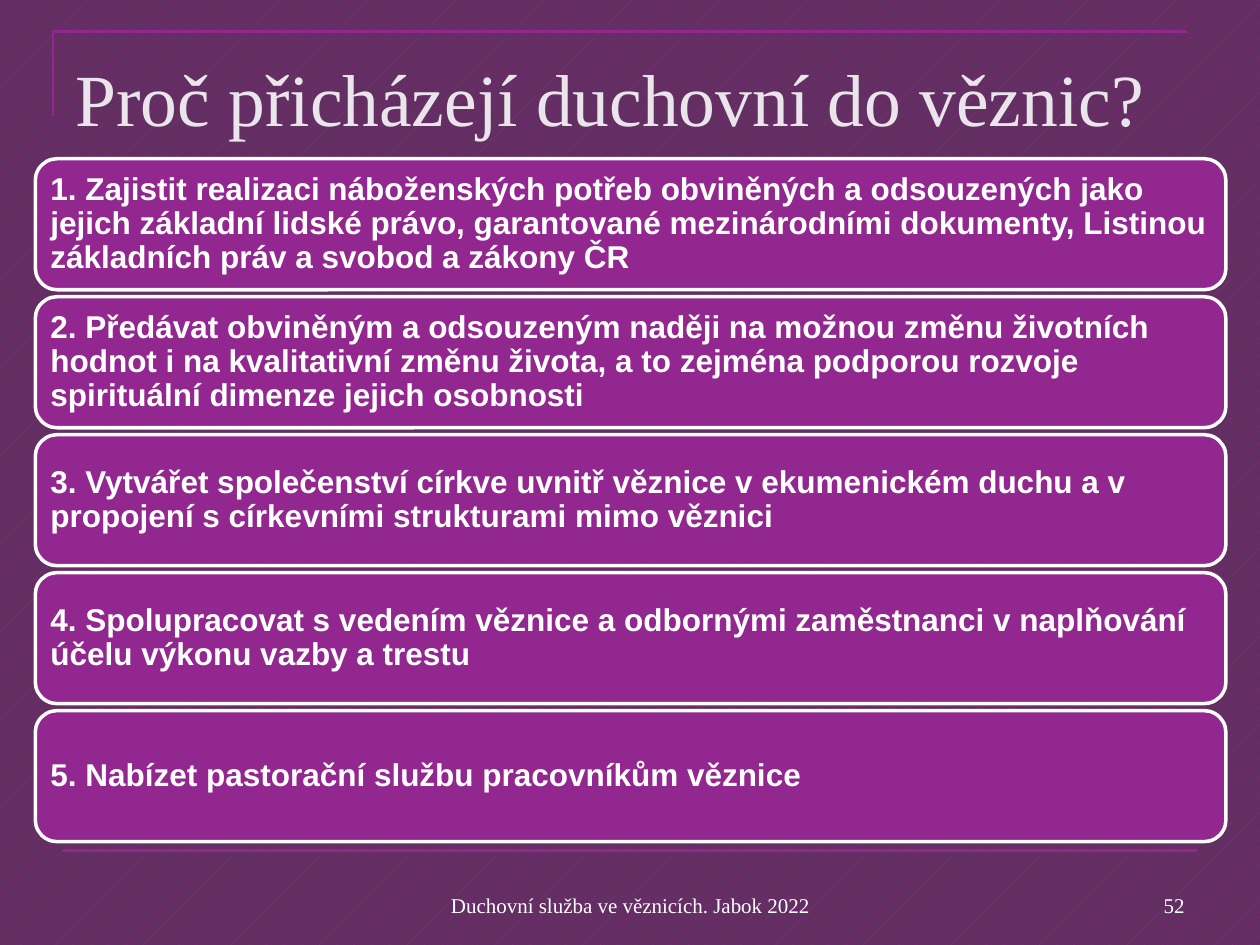
"""Builds a slide listing five reasons why chaplains come to prisons."""
from dataclasses import dataclass

from lxml import etree
from pptx import Presentation
from pptx import util as u
from pptx.dml.color import RGBColor
from pptx.enum import dml, shapes, text
from pptx.oxml.ns import qn

TITLE = "Proč přicházejí duchovní do věznic?"
REASONS = [
    "1. Zajistit realizaci náboženských potřeb obviněných a odsouzených jako jejich základní "
    "lidské právo, garantované mezinárodními dokumenty, Listinou základních práv a svobod a zákony ČR",
    "2. Předávat obviněným a odsouzeným naději na možnou změnu životních hodnot i na kvalitativní "
    "změnu života, a to zejména podporou rozvoje spirituální dimenze jejich osobnosti",
    "3. Vytvářet společenství církve uvnitř věznice v ekumenickém duchu a v propojení "
    "s církevními strukturami mimo věznici",
    "4. Spolupracovat s vedením věznice a odbornými zaměstnanci v naplňování účelu výkonu "
    "vazby a trestu",
    "5. Nabízet pastorační službu pracovníkům věznice",
]
FOOTER = "Duchovní služba ve věznicích. Jabok 2022"
PAGE = "52"


@dataclass(frozen=True)
class Theme:
    back: RGBColor = RGBColor.from_string("632E62")
    accent: RGBColor = RGBColor.from_string("92278F")
    title: RGBColor = RGBColor.from_string("EAE5EB")
    white: RGBColor = RGBColor.from_string("FFFFFF")
    serif: str = "Times New Roman"
    sans: str = "Arial"
    title_size: int = 42
    body_size: int = 18
    small_size: int = 12
    rule_width: float = 1.5
    card_width: int = 2


T = Theme()
CARD_LEFT, CARD_TOP, CARD_W, CARD_H, CARD_PITCH = 0.28, 1.26, 9.45, 1.04, 1.095


def write(sp, words, font, size, color, align, anchor, bold=False):
    tf = sp.text_frame
    tf.word_wrap = True
    tf.vertical_anchor = anchor
    p = tf.paragraphs[0]
    p.alignment = align
    r = p.add_run()
    r.text = words
    r.font.name, r.font.size, r.font.bold = font, u.Pt(size), bold
    r.font.color.rgb = color
    return tf, p


def add_text(s, box, *style):
    return write(s.shapes.add_textbox(*map(u.Inches, box)), *style)


def stroke(sp, color, width):
    sp.line.color.rgb = color
    sp.line.width = u.Pt(width)


def add_rules(s):
    corner = [(u.Inches(x), u.Inches(y)) for x, y in ((0.42, 0.92), (0.42, 0.25), (9.42, 0.25))]
    builder = s.shapes.build_freeform(*corner[0])
    builder.add_line_segments(corner[1:], close=False)
    frame = builder.convert_to_shape()
    frame.fill.background()
    frame.shadow.inherit = False
    stroke(frame, T.accent, T.rule_width)
    rule = s.shapes.add_connector(
        shapes.MSO_CONNECTOR.STRAIGHT, *map(u.Inches, (0.5, 6.75, 9.5, 6.75)))
    etree.SubElement(rule._element.spPr, qn("a:effectLst"))
    stroke(rule, T.accent, T.rule_width)


def add_card(s, index, words):
    box = (CARD_LEFT, CARD_TOP + index * CARD_PITCH, CARD_W, CARD_H)
    sp = s.shapes.add_shape(shapes.MSO_SHAPE.ROUNDED_RECTANGLE, *map(u.Inches, box))
    sp.shadow.inherit = False
    sp.fill.solid()
    sp.fill.fore_color.rgb = T.accent
    stroke(sp, T.white, T.card_width)
    tf, p = write(sp, words, T.sans, T.body_size, T.white,
                  text.PP_ALIGN.LEFT, text.MSO_ANCHOR.MIDDLE, bold=True)
    tf.margin_left = tf.margin_right = tf.margin_top = tf.margin_bottom = u.Inches(0.07)
    p.line_spacing = 0.9


def main():
    prs = Presentation()
    prs.slide_width, prs.slide_height = u.Inches(10), u.Inches(7.5)
    s = prs.slides.add_slide(prs.slide_layouts[6])
    fill = s.background.fill
    fill.patterned()
    fill.pattern = dml.MSO_PATTERN.PERCENT_5
    fill.fore_color.rgb, fill.back_color.rgb = T.accent, T.back

    add_rules(s)
    tf, _ = add_text(s, (0.5, 0.3, 9, 1.25), TITLE, T.serif, T.title_size, T.title,
                     text.PP_ALIGN.LEFT, text.MSO_ANCHOR.TOP)
    tf.margin_top = u.Inches(0.12)
    for index, words in enumerate(REASONS):
        add_card(s, index, words)
    small = (T.serif, T.small_size, T.white)
    add_text(s, (3.42, 6.83, 3.17, 0.5), FOOTER, *small,
             text.PP_ALIGN.CENTER, text.MSO_ANCHOR.BOTTOM)
    add_text(s, (7.17, 6.83, 2.33, 0.5), PAGE, *small,
             text.PP_ALIGN.RIGHT, text.MSO_ANCHOR.BOTTOM)
    prs.save("out.pptx")


if __name__ == "__main__":
    main()
